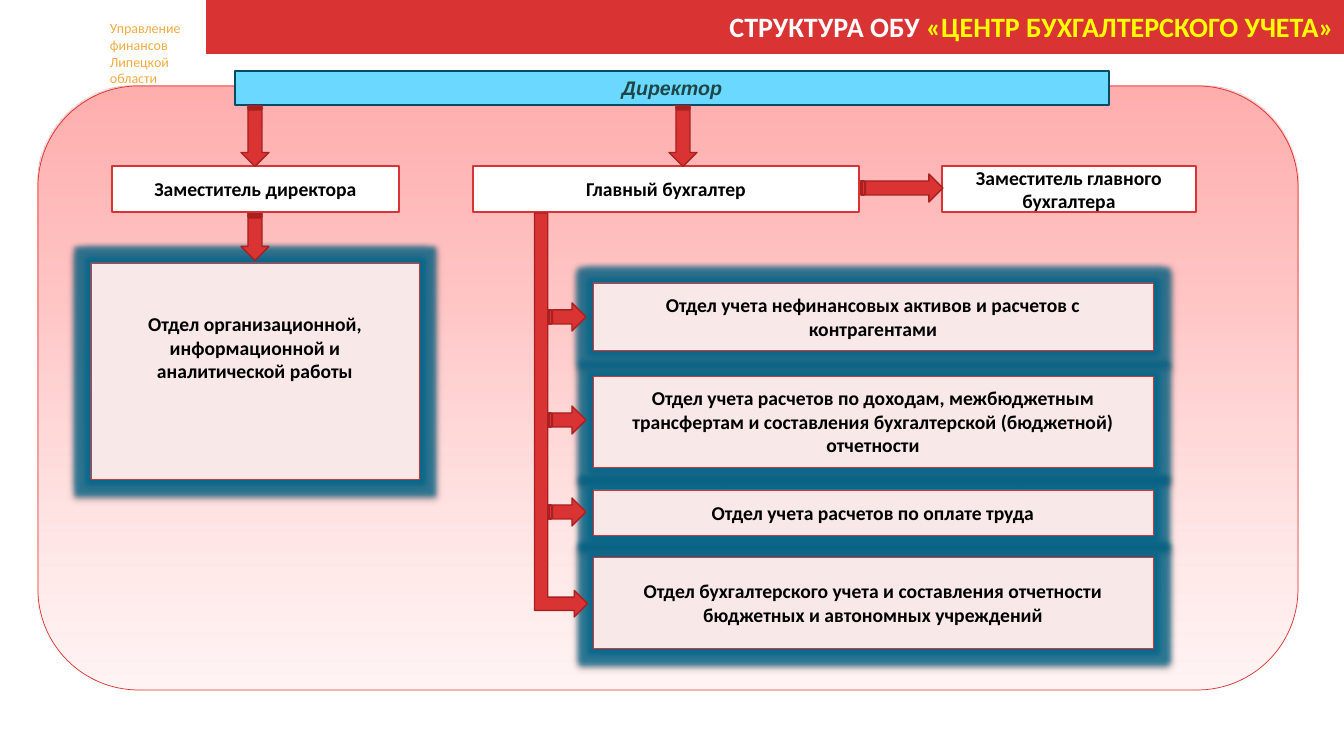
import pptx
import pptx.dml.color
import pptx.enum.shapes
import pptx.enum.text
import pptx.oxml
import pptx.oxml.ns
import pptx.util

SHAPE = pptx.enum.shapes.MSO_SHAPE
ALIGN = pptx.enum.text.PP_ALIGN
RED, DARK_RED, BLACK, WHITE = "D93333", "A92020", "000000", "FFFFFF"
PALE, YELLOW, SKY, NAVY, TEAL, AMBER = "F8E8E8", "FFFF00", "6AD8FF", "004B66", "1E4649", "F2AC44"
GLOW = "00658A"


def px(n):
    """Turn slide pixels into EMU."""
    return pptx.util.Emu(round(n * 12192000 / 1344))


def rgb(value):
    """Turn a hex string into a colour."""
    return pptx.dml.color.RGBColor.from_string(value)


def xml(body):
    """Build an element from a fragment of DrawingML."""
    tag, rest = body.split(" ", 1)
    return pptx.oxml.parse_xml(f"<a:{tag} {pptx.oxml.ns.nsdecls('a')} {rest}")


class Chart:
    """Draw the elements of an organisation chart on one slide."""

    def __init__(self, slide, font="Calibri"):
        """Keep the slide and its main font."""
        self.s = slide
        self.font = font

    def paint(self, sp, fill, line, width):
        """Set fill and outline of a shape."""
        sp.fill.solid()
        sp.fill.fore_color.rgb = rgb(fill)
        sp.line.color.rgb = rgb(line)
        sp.line.width = pptx.util.Pt(width)

    def text(self, sp, runs, size, align=ALIGN.CENTER, bold=True, italic=False, font=None):
        """Fill one paragraph from (text, colour) runs."""
        tf = sp.text_frame
        tf.word_wrap = True
        tf.auto_size = pptx.enum.text.MSO_AUTO_SIZE.NONE
        tf.vertical_anchor = pptx.enum.text.MSO_ANCHOR.MIDDLE
        p = tf.paragraphs[0]
        p.alignment = align
        for words, colour in runs:
            r = p.add_run()
            r.text = words
            r.font.name = font or self.font
            r.font.size = pptx.util.Pt(size)
            r.font.bold, r.font.italic = bold, italic
            r.font.color.rgb = rgb(colour)

    def shape(self, kind, x, y, w, h, fill, line, width=1):
        """Add a flat preset shape."""
        sp = self.s.shapes.add_shape(kind, px(x), px(y), px(w), px(h))
        sp.shadow.inherit = False
        self.paint(sp, fill, line, width)
        return sp

    def title(self, x, y, w, h, runs):
        """Turn the title placeholder into the header bar."""
        sp = self.s.shapes.title
        sp.left, sp.top, sp.width, sp.height = px(x), px(y), px(w), px(h)
        self.paint(sp, RED, RED, 0.5)
        self.text(sp, runs, 20, ALIGN.RIGHT)

    def label(self, x, y, w, h, words):
        """Add the small name of the authority."""
        sp = self.s.shapes.add_textbox(px(x), px(y), px(w), px(h))
        self.text(sp, [(words, AMBER)], 10, ALIGN.LEFT, bold=False)

    def panel(self, x, y, w, h):
        """Add the rounded background with its gradient."""
        sp = self.shape(SHAPE.ROUNDED_RECTANGLE, x, y, w, h, WHITE, RED, 0.5)
        sp.fill.gradient()
        sp.fill.gradient_angle = 270
        stops = sp._element.spPr.find(".//" + pptx.oxml.ns.qn("a:gsLst"))
        for stop in list(stops):
            stops.remove(stop)
        for pos, colour, alpha in ((0, "FFADAD", 100), (35, "FFC5C5", 100), (100, "FFE9E9", 50)):
            stops.append(xml(f'gs pos="{pos * 1000}"><a:srgbClr val="{colour}">'
                             f'<a:alpha val="{alpha * 1000}"/></a:srgbClr></a:gs>'))

    def post(self, x, y, w, h, words):
        """Add a white box for a position."""
        sp = self.shape(SHAPE.RECTANGLE, x, y, w, h, WHITE, RED)
        self.text(sp, [(words, BLACK)], 14)

    def department(self, x, y, w, h, words):
        """Add a glowing box for a department."""
        sp = self.shape(SHAPE.RECTANGLE, x, y, w, h, PALE, RED, 0.5)
        effects = sp._element.spPr.find(pptx.oxml.ns.qn("a:effectLst"))
        effects.append(xml(f'glow rad="101600"><a:srgbClr val="{GLOW}">'
                           '<a:alpha val="75000"/></a:srgbClr></a:glow>'))
        effects.append(xml('outerShdw blurRad="40000" dist="23000" dir="5400000" rotWithShape="0">'
                           f'<a:srgbClr val="{BLACK}"><a:alpha val="35000"/></a:srgbClr></a:outerShdw>'))
        self.text(sp, [(words, BLACK)], 14)
        return sp

    def arrow(self, cx, cy, length, turn=0, kind=SHAPE.STRIPED_RIGHT_ARROW, thick=28):
        """Add a block arrow around its centre."""
        sp = self.shape(kind, cx - length / 2, cy - thick / 2, length, thick, RED, DARK_RED)
        sp.rotation = turn


def main():
    """Build the slide."""
    prs = pptx.Presentation()
    prs.slide_width, prs.slide_height = px(1344), px(756)
    chart = Chart(prs.slides.add_slide(prs.slide_layouts[5]))

    chart.label(100, 14, 98, 78, "Управление финансов Липецкой области")
    chart.panel(38, 86, 1260, 604)
    chart.title(206, 0, 1138, 53, [("СТРУКТУРА ОБУ ", WHITE), ("«ЦЕНТР БУХГАЛТЕРСКОГО УЧЕТА»", YELLOW)])

    director = chart.shape(SHAPE.RECTANGLE, 235, 71, 874, 34, SKY, NAVY)
    chart.text(director, [("Директор", TEAL)], 14, italic=True, font="Arial")
    for x, w, words in (
        (112, 287, "Заместитель директора"),
        (473, 386, "Главный бухгалтер"),
        (942, 254, "Заместитель главного бухгалтера"),
    ):
        chart.post(x, 166, w, 46, words)

    office = chart.department(91, 263, 328, 216, "Отдел организационной, информационной и аналитической работы")
    office.text_frame.margin_left = office.text_frame.margin_right = px(30)
    office.text_frame.margin_bottom = px(52)
    for y, h, words in (
        (283, 67, "Отдел учета нефинансовых активов и расчетов с контрагентами"),
        (376, 91, "Отдел учета расчетов по доходам, межбюджетным трансфертам и составления "
                  "бухгалтерской (бюджетной) отчетности"),
        (490, 45, "Отдел учета расчетов по оплате труда"),
        (557, 91, "Отдел бухгалтерского учета и составления отчетности бюджетных и автономных учреждений"),
    ):
        chart.department(593, y, 560, h, words)

    for cy in (317, 420, 512):
        chart.arrow(567, cy, 38)
    for cx, cy, length in ((255, 237, 47), (683, 136, 61), (255, 136, 61)):
        chart.arrow(cx, cy, length, 90)
    chart.arrow(902, 188, 82)
    chart.arrow(561, 415, 404, 90, SHAPE.BENT_UP_ARROW, 53)

    prs.save("out.pptx")


if __name__ == "__main__":
    main()
